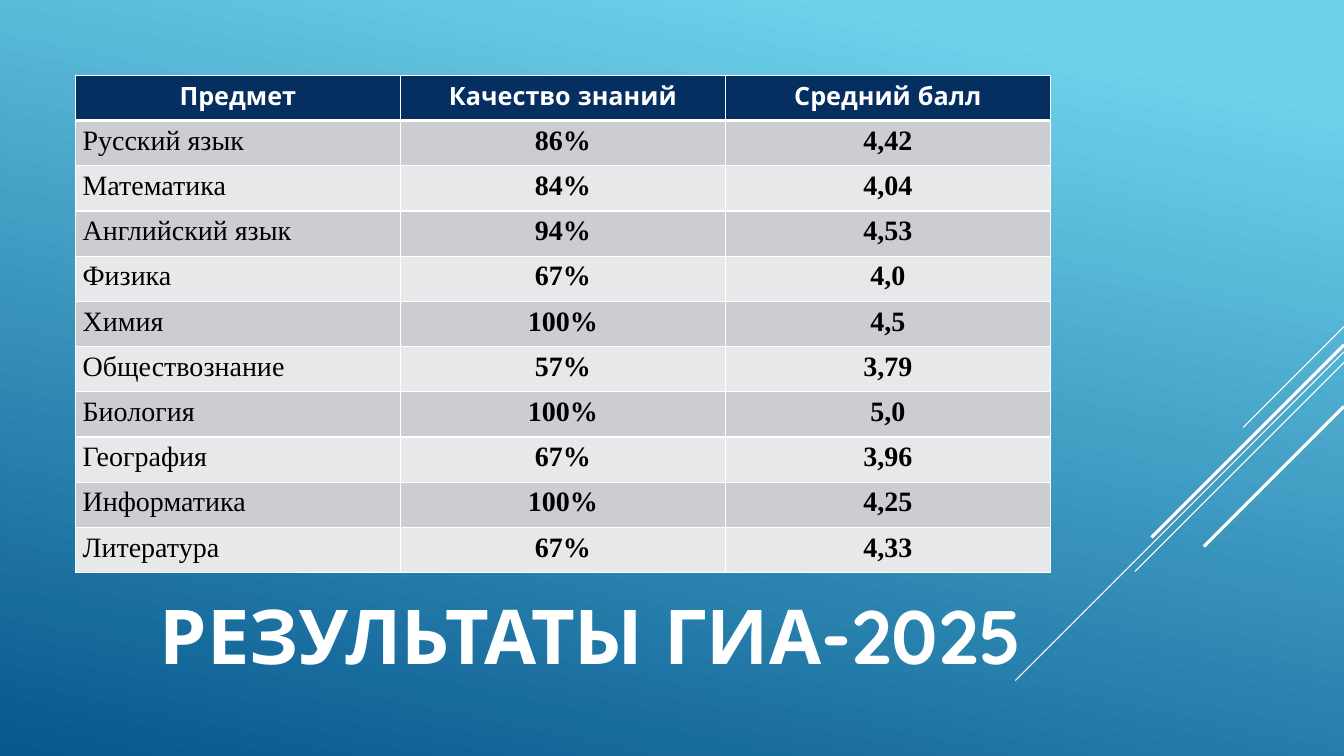
from dataclasses import dataclass

from lxml import etree
from pptx import Presentation
from pptx import util as u
from pptx.dml.color import RGBColor
from pptx.enum import shapes, text
from pptx.oxml.ns import qn


@dataclass(frozen=True)
class Theme:
    white: str = "FFFFFF"
    black: str = "000000"
    navy: str = "052F61"
    bands: tuple[str, str] = ("CCCDD2", "E7E8EA")
    sky: tuple[tuple[float, str], ...] = ((0.1, "6ED2EB"), (1.0, "06588E"))
    sans: str = "Quicksand"
    serif: str = "Times New Roman"
    title: int = 54
    head: int = 18
    body: int = 20


@dataclass(frozen=True)
class Ray:
    """A diagonal at 45 degrees, falling from the right edge."""
    top: float
    run: float
    width: float


@dataclass(frozen=True)
class Result:
    subject: str
    rate: str
    mark: str


THEME = Theme()
WIDE, HIGH = 33.87, 19.05
LEFT, TOP, COL, ROW = 1.9, 1.9, 8.19, 1.14

RAYS = [
    Ray(8.23, 2.54, 0.75),
    Ray(8.87, 8.28, 0.75),
    Ray(9.13, 5.27, 0.75),
    Ray(8.69, 4.85, 2.25),
    Ray(10.24, 3.53, 2.25),
]
HEAD = Result("Предмет", "Качество знаний", "Средний балл")
ROWS = [
    Result("Русский язык", "86%", "4,42"),
    Result("Математика", "84%", "4,04"),
    Result("Английский язык", "94%", "4,53"),
    Result("Физика", "67%", "4,0"),
    Result("Химия", "100%", "4,5"),
    Result("Обществознание", "57%", "3,79"),
    Result("Биология", "100%", "5,0"),
    Result("География", "67%", "3,96"),
    Result("Информатика", "100%", "4,25"),
    Result("Литература", "67%", "4,33"),
]


def color(code: str) -> RGBColor:
    return RGBColor.from_string(code)


def style(para, face: str, size: int, code: str, bold: bool) -> None:
    for run in para.runs:
        font = run.font
        font.name, font.size, font.bold = face, u.Pt(size), bold
        font.color.rgb = color(code)


def paint(slide) -> None:
    fill = slide.background.fill
    fill.gradient()
    fill.gradient_angle = 258
    for stop, (place, code) in zip(fill.gradient_stops, THEME.sky):
        stop.position = place
        stop.color.rgb = color(code)


def draw(slide, ray: Ray) -> None:
    line = slide.shapes.add_connector(
        shapes.MSO_CONNECTOR.STRAIGHT, u.Cm(WIDE), u.Cm(ray.top),
        u.Cm(WIDE - ray.run), u.Cm(ray.top + ray.run))
    line.line.color.rgb = color(THEME.white)
    line.line.width = u.Pt(ray.width)
    etree.SubElement(line._element.spPr, qn("a:effectLst"))


def border(cell, top: int, base: int) -> None:
    props = cell._tc.get_or_add_tcPr()
    sides = {"lnL": 1, "lnR": 1, "lnT": top, "lnB": base}
    for spot, (side, width) in enumerate(sides.items()):
        edge = etree.Element(qn(f"a:{side}"), w=str(u.Pt(width)))
        solid = etree.SubElement(edge, qn("a:solidFill"))
        etree.SubElement(solid, qn("a:srgbClr"), val=THEME.white)
        props.insert(spot, edge)


def fill_cell(cell, words: str, row: int, col: int) -> None:
    cell.text_frame.text = words
    para = cell.text_frame.paragraphs[0]
    para.alignment = text.PP_ALIGN.CENTER
    cell.fill.solid()
    if row == 0:
        cell.fill.fore_color.rgb = color(THEME.navy)
        style(para, THEME.sans, THEME.head, THEME.white, True)
    else:
        cell.fill.fore_color.rgb = color(THEME.bands[(row - 1) % 2])
        cell.margin_left = cell.margin_right = u.Cm(0.18)
        cell.margin_top = cell.margin_bottom = 0
        para.line_spacing = 1.15
        if col == 0:
            para.alignment = text.PP_ALIGN.JUSTIFY
        style(para, THEME.serif, THEME.body, THEME.black, col > 0)
    border(cell, 3 if row == 1 else 1, 3 if row == 0 else 1)


def add_grid(slide) -> None:
    lines = [HEAD, *ROWS]
    table = slide.shapes.add_table(
        len(lines), 3, u.Cm(LEFT), u.Cm(TOP),
        u.Cm(3 * COL), u.Cm(len(lines) * ROW)).table
    for col in table.columns:
        col.width = u.Cm(COL)
    for row, item in enumerate(lines):
        table.rows[row].height = u.Cm(ROW)
        for col, words in enumerate((item.subject, item.rate, item.mark)):
            fill_cell(table.cell(row, col), words, row, col)


def add_title(slide) -> None:
    box = slide.shapes.add_textbox(
        u.Cm(3.78), u.Cm(13.87), u.Cm(22.25), u.Cm(4.5))
    frame = box.text_frame
    frame.word_wrap = True
    frame.vertical_anchor = text.MSO_ANCHOR.MIDDLE
    frame.text = "РЕЗУЛЬТАТЫ ГИА-2025"
    para = frame.paragraphs[0]
    para.line_spacing = 0.9
    style(para, THEME.sans, THEME.title, THEME.white, True)


def main() -> None:
    deck = Presentation()
    deck.slide_width, deck.slide_height = u.Cm(WIDE), u.Cm(HIGH)
    slide = deck.slides.add_slide(deck.slide_layouts[6])

    # Background and diagonal rays
    paint(slide)
    for ray in RAYS:
        draw(slide, ray)

    # Title and exam results
    add_title(slide)
    add_grid(slide)
    deck.save("out.pptx")


if __name__ == "__main__":
    main()
